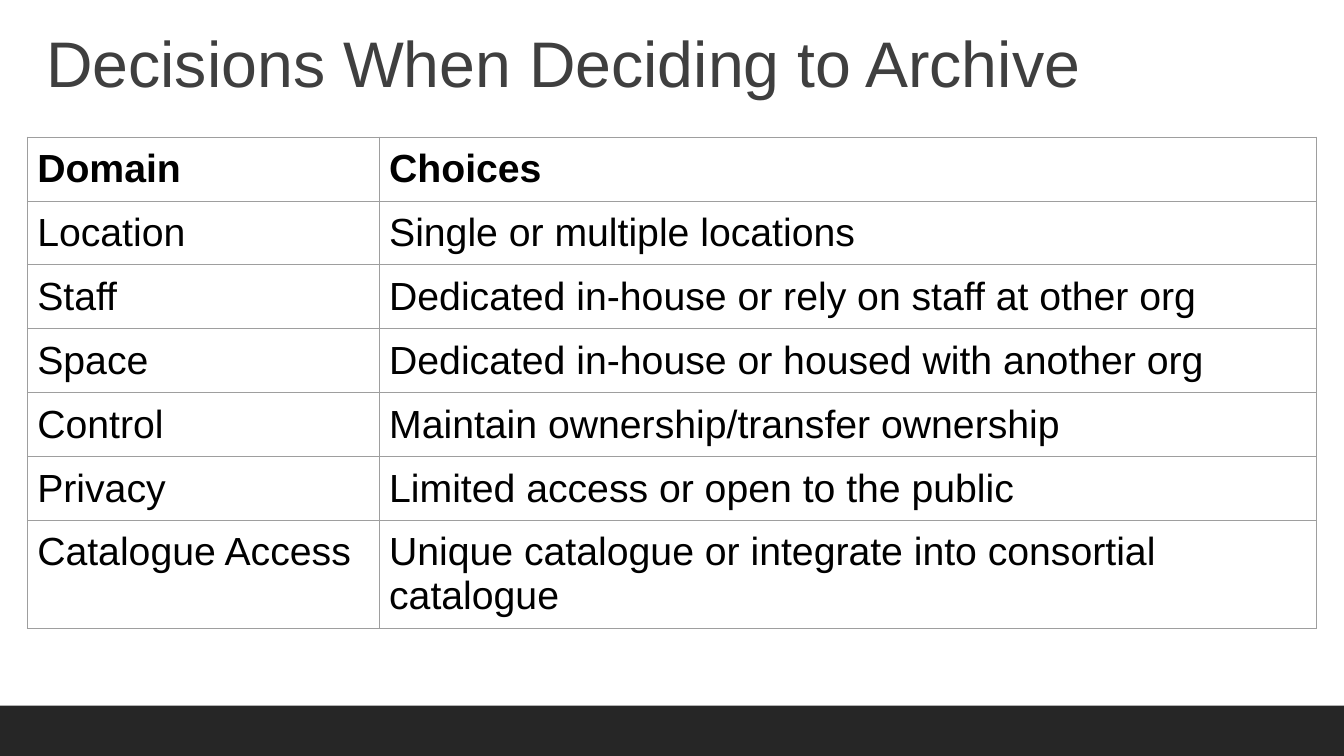
from lxml import etree
from pptx import Presentation
from pptx.dml.color import RGBColor
from pptx.enum.shapes import MSO_SHAPE as SHAPE
from pptx.enum.text import MSO_ANCHOR as ANCHOR
from pptx.oxml.ns import qn
from pptx.util import Pt

TITLE = "Decisions When Deciding to Archive"
ROWS = [
    ("Domain", "Choices"),
    ("Location", "Single or multiple locations"),
    ("Staff", "Dedicated in-house or rely on staff at other org"),
    ("Space", "Dedicated in-house or housed with another org"),
    ("Control", "Maintain ownership/transfer ownership"),
    ("Privacy", "Limited access or open to the public"),
    ("Catalogue Access", "Unique catalogue or integrate into consortial catalogue"),
]
COLORS = {"title": "3F3F3F", "text": "000000", "footer": "262626", "border": "9E9E9E"}
FONT = "Arial"
PX = 9144
SLIDE_W, SLIDE_H = 1333, 750
FOOTER_H = 50
TITLE_BOX = (36, 20, 1100, 86)
TABLE_X, TABLE_Y = 27, 136
COL_WIDTHS = (349, 930)
ROW_H, LAST_ROW_H = 62, 106
CELL_PAD = 10


def px(*values):
    return [value * PX for value in values]


def rgb(name):
    return RGBColor.from_string(COLORS[name])


def add_run(p, text, size, color, bold=False):
    r = p.add_run()
    r.text = text
    r.font.name = FONT
    r.font.size = Pt(size)
    r.font.bold = bold
    r.font.color.rgb = rgb(color)


def add_borders(cell):
    tc_pr = cell._tc.get_or_add_tcPr()
    for i, side in enumerate(("lnL", "lnR", "lnT", "lnB")):
        ln = etree.Element(qn(f"a:{side}"), w=str(Pt(0.75)))
        fill = etree.SubElement(ln, qn("a:solidFill"))
        etree.SubElement(fill, qn("a:srgbClr"), val=COLORS["border"])
        tc_pr.insert(i, ln)


def add_footer(s):
    sp = s.shapes.add_shape(SHAPE.RECTANGLE, *px(0, SLIDE_H - FOOTER_H, SLIDE_W, FOOTER_H))
    sp.shadow.inherit = False
    sp.fill.solid()
    sp.fill.fore_color.rgb = rgb("footer")
    sp.line.fill.background()


def add_title(s):
    tf = s.shapes.add_textbox(*px(*TITLE_BOX)).text_frame
    tf.word_wrap = True
    tf.vertical_anchor = ANCHOR.BOTTOM
    p = tf.paragraphs[0]
    p.line_spacing = 0.9
    add_run(p, TITLE, 46, "title")


def add_choices(s):
    heights = [ROW_H] * (len(ROWS) - 1) + [LAST_ROW_H]
    box = px(TABLE_X, TABLE_Y, sum(COL_WIDTHS), sum(heights))
    table = s.shapes.add_table(len(ROWS), len(COL_WIDTHS), *box).table
    table.horz_banding = False
    table.first_row = False
    for col, width in zip(table.columns, COL_WIDTHS):
        col.width = width * PX
    for i, (row, height, texts) in enumerate(zip(table.rows, heights, ROWS)):
        row.height = height * PX
        for cell, text in zip(row.cells, texts):
            cell.fill.background()
            cell.margin_left = cell.margin_right = CELL_PAD * PX
            cell.margin_top = cell.margin_bottom = CELL_PAD * PX
            add_borders(cell)
            add_run(cell.text_frame.paragraphs[0], text, 28, "text", bold=i == 0)


def main():
    prs = Presentation()
    prs.slide_width, prs.slide_height = px(SLIDE_W, SLIDE_H)
    s = prs.slides.add_slide(prs.slide_layouts[6])
    add_footer(s)
    add_choices(s)
    add_title(s)
    prs.save("out.pptx")


if __name__ == "__main__":
    main()
